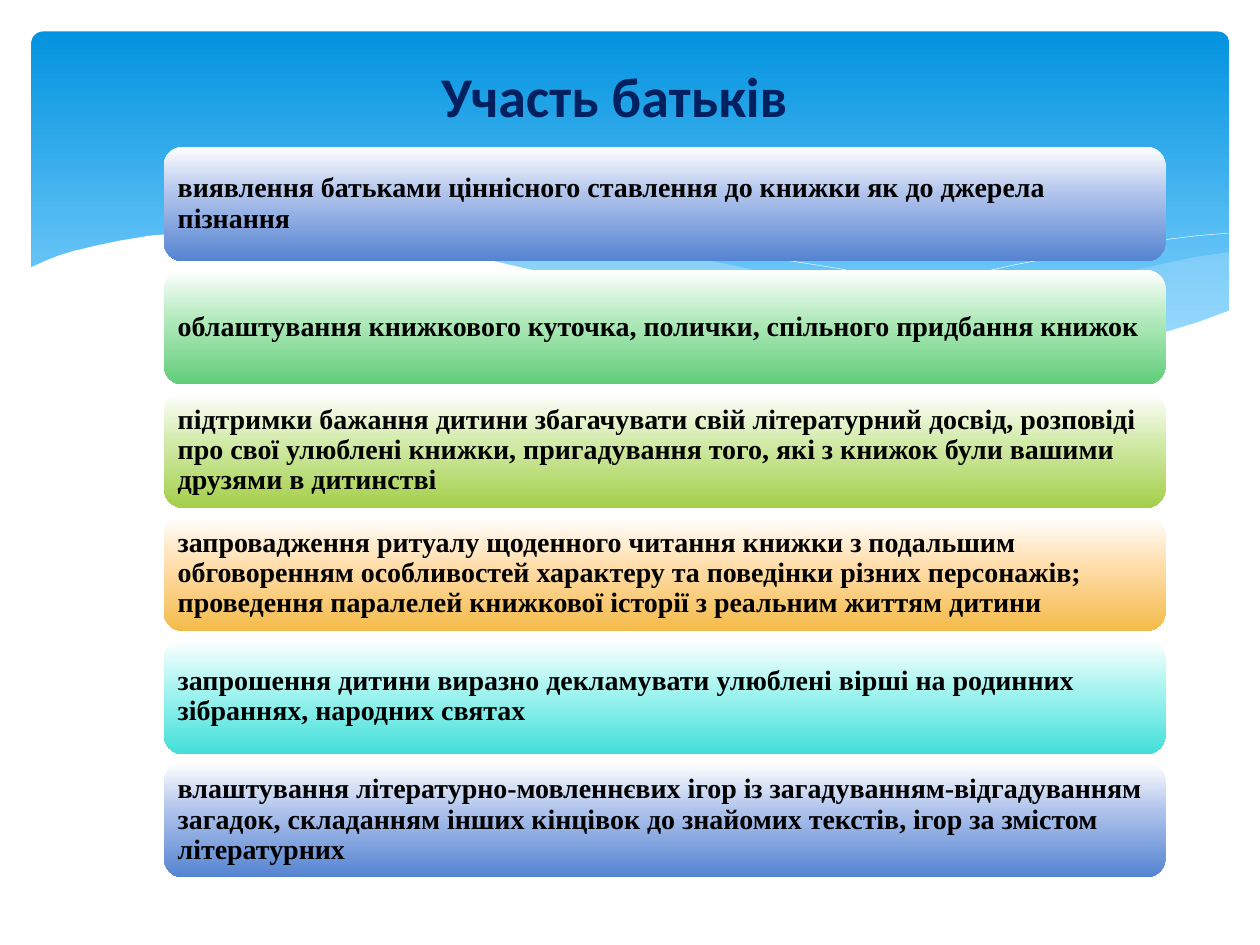
from lxml.etree import SubElement
from pptx import Presentation
from pptx.dml.color import RGBColor
from pptx.enum.shapes import MSO_SHAPE
from pptx.enum.text import MSO_ANCHOR, PP_ALIGN
from pptx.oxml.ns import qn
from pptx.util import Pt

WHITE = RGBColor(0xFF, 0xFF, 0xFF)
BLACK = RGBColor(0x00, 0x00, 0x00)
NAVY = RGBColor(0x00, 0x20, 0x60)
SKY = RGBColor(0x02, 0x93, 0xE0)
SKY_LIGHT = RGBColor(0x83, 0xD3, 0xFE)
WAVE = RGBColor(0xC6, 0xE7, 0xFC)
BLUE = (RGBColor(0xAB, 0xC0, 0xEB), RGBColor(0x54, 0x84, 0xD1))
GREEN = (RGBColor(0xB1, 0xE9, 0xBB), RGBColor(0x61, 0xCD, 0x78))
LIME = (RGBColor(0xD1, 0xEA, 0xA7), RGBColor(0xA4, 0xCF, 0x4A))
ORANGE = (RGBColor(0xFF, 0xDD, 0xAA), RGBColor(0xF4, 0xBB, 0x4A))
TURQUOISE = (RGBColor(0xA5, 0xF4, 0xF0), RGBColor(0x42, 0xDF, 0xD9))

prs = Presentation()
prs.slide_width, prs.slide_height = Pt(720), Pt(540)
s = prs.slides.add_slide(prs.slide_layouts[6])


def add_panel(left, top, width, height, stops):
    """Rounded rectangle with a top-to-bottom gradient of (percent, colour) stops."""
    sp = s.shapes.add_shape(MSO_SHAPE.ROUNDED_RECTANGLE,
                            Pt(left), Pt(top), Pt(width), Pt(height))
    sp.shadow.inherit = False
    sp.line.fill.background()
    sp.fill.gradient()
    sp.fill.gradient_angle = 270
    gs_list = sp._element.spPr.find(qn("a:gradFill")).find(qn("a:gsLst"))
    for gs in list(gs_list):
        gs_list.remove(gs)
    for percent, color in stops:
        gs = SubElement(gs_list, qn("a:gs"), pos=str(percent * 1000))
        SubElement(gs, qn("a:srgbClr"), val=str(color))
    return sp


def add_curve(points, closed):
    """Outline through points given in units of 0.72 pt."""
    builder = s.shapes.build_freeform(*points[0], scale=Pt(0.72))
    builder.add_line_segments(points[1:], close=closed)
    sp = builder.convert_to_shape()
    sp.shadow.inherit = False
    return sp


# Blue header
header = add_panel(18, 18, 684.5, 194.5, [(0, SKY), (90, SKY_LIGHT)])
header.adjustments[0] = 0.034

# Translucent waves: points, opacity in percent
waves = [
    ([(976, 200), (948, 204), (921, 210), (891, 216), (861, 223), (805, 237),
      (753, 248), (706, 257), (661, 265), (691, 269), (719, 271), (745, 275),
      (781, 277), (814, 278), (854, 276), (889, 272), (921, 265), (949, 257),
      (976, 247)], 29),
    ([(893, 273), (866, 269), (807, 260), (741, 247), (668, 231), (629, 222),
      (584, 211), (541, 203), (502, 196), (465, 191), (420, 187), (380, 185),
      (344, 186), (313, 188), (286, 191), (323, 196), (362, 203), (404, 211),
      (449, 222), (530, 240), (601, 255), (665, 266), (722, 274), (773, 277),
      (818, 278), (857, 277)], 40),
]
for points, opacity in waves:
    sp = add_curve(points, True)
    sp.line.fill.background()
    sp.fill.solid()
    sp.fill.fore_color.rgb = WAVE
    color = sp._element.spPr.find(qn("a:solidFill")).find(qn("a:srgbClr"))
    SubElement(color, qn("a:alpha"), val=str(opacity * 1000))

# Thin white lines
hairlines = [
    [(309, 195), (328, 192), (353, 189), (387, 187), (433, 187), (469, 189),
     (510, 192), (556, 197), (608, 204), (665, 213), (727, 226), (795, 241),
     (869, 261), (907, 272)],
    [(613, 257), (653, 246), (695, 235), (748, 223), (806, 210), (866, 199),
     (910, 192), (951, 187), (975, 185)],
]
for points in hairlines:
    sp = add_curve(points, False)
    sp.fill.background()
    sp.line.color.rgb = WHITE
    sp.line.width = Pt(0.25)

# White wave that cuts off the header
sp = add_curve(
    [(977, 246), (950, 256), (920, 265), (887, 271), (850, 275), (809, 277),
     (761, 275), (708, 270), (648, 262), (579, 250), (503, 233), (447, 220),
     (391, 207), (340, 197), (292, 190), (250, 186), (211, 184), (177, 184),
     (146, 185), (119, 187), (95, 191), (76, 195), (59, 199), (46, 203),
     (36, 207), (23, 213), (23, 329), (977, 329)], True)
sp.fill.solid()
sp.fill.fore_color.rgb = WHITE
sp.line.fill.background()

# Title
tf = s.shapes.add_textbox(Pt(121.5), Pt(26.5), Pt(459.5), Pt(56)).text_frame
tf.word_wrap = True
tf.vertical_anchor = MSO_ANCHOR.MIDDLE
p = tf.paragraphs[0]
p.alignment = PP_ALIGN.CENTER
r = p.add_run()
r.text = "Участь батьків"
r.font.name, r.font.size, r.font.bold = "Calibri", Pt(32), True
r.font.color.rgb = NAVY

# List of panels
items = [
    ("виявлення батьками ціннісного ставлення до книжки як до джерела пізнання", BLUE),
    ("облаштування книжкового куточка, полички, спільного придбання книжок", GREEN),
    ("підтримки бажання дитини збагачувати свій літературний досвід, розповіді про "
     "свої улюблені книжки, пригадування того, які з книжок були вашими друзями в "
     "дитинстві", LIME),
    ("запровадження ритуалу щоденного читання книжки з подальшим обговоренням "
     "особливостей характеру та поведінки різних персонажів; проведення паралелей "
     "книжкової історії з реальним життям дитини", ORANGE),
    ("запрошення дитини виразно декламувати улюблені вірші на родинних зібраннях, "
     "народних святах", TURQUOISE),
    ("влаштування літературно-мовленнєвих ігор із загадуванням-відгадуванням "
     "загадок, складанням інших кінцівок до знайомих текстів, ігор за змістом "
     "літературних", BLUE),
]
for i, (text, (middle, bottom)) in enumerate(items):
    sp = add_panel(93.6, 83.8 + i * 70.4, 572.4, 65.5,
                   [(0, WHITE), (44, middle), (100, bottom)])
    tf = sp.text_frame
    tf.word_wrap = True
    tf.vertical_anchor = MSO_ANCHOR.MIDDLE
    tf.margin_left = tf.margin_right = tf.margin_top = tf.margin_bottom = Pt(4.8)
    p = tf.paragraphs[0]
    p.alignment = PP_ALIGN.LEFT
    p.line_spacing = 0.9
    r = p.add_run()
    r.text = text
    r.font.name, r.font.size, r.font.bold = "Times New Roman", Pt(16), True
    r.font.color.rgb = BLACK

prs.save("out.pptx")
